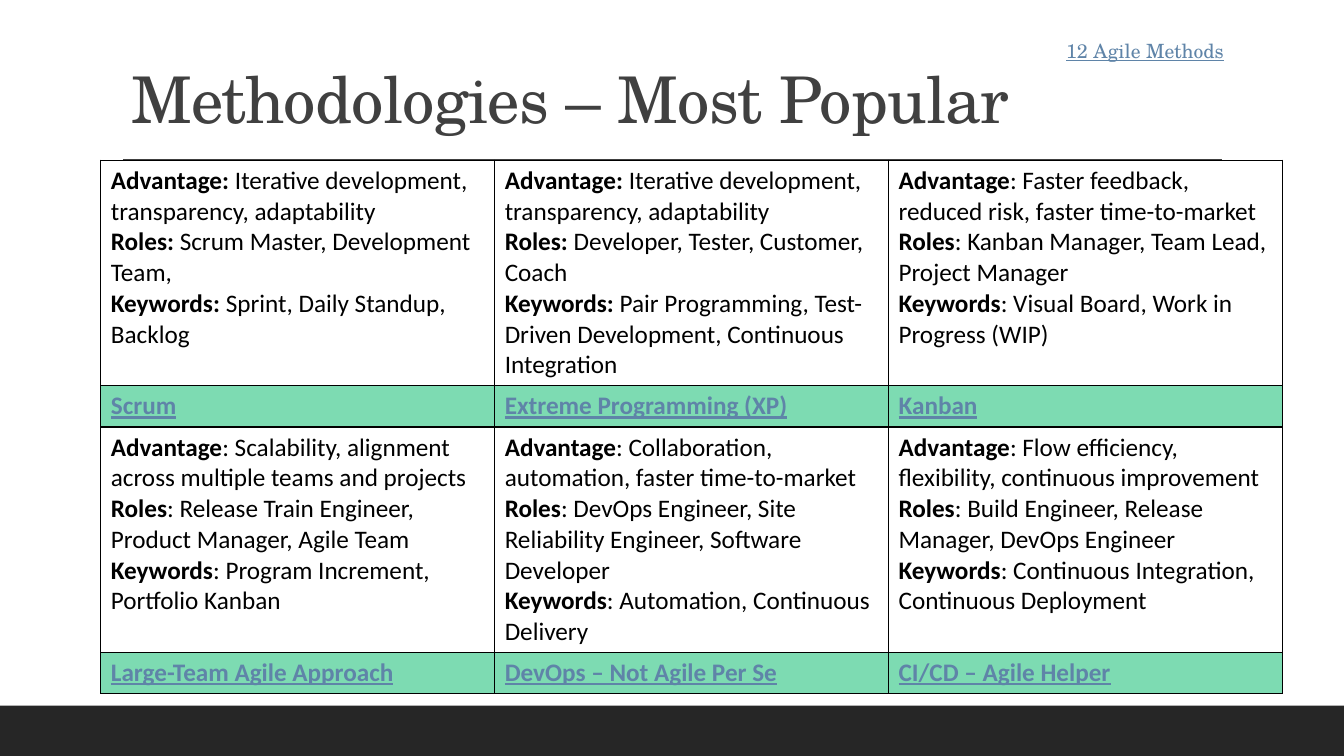
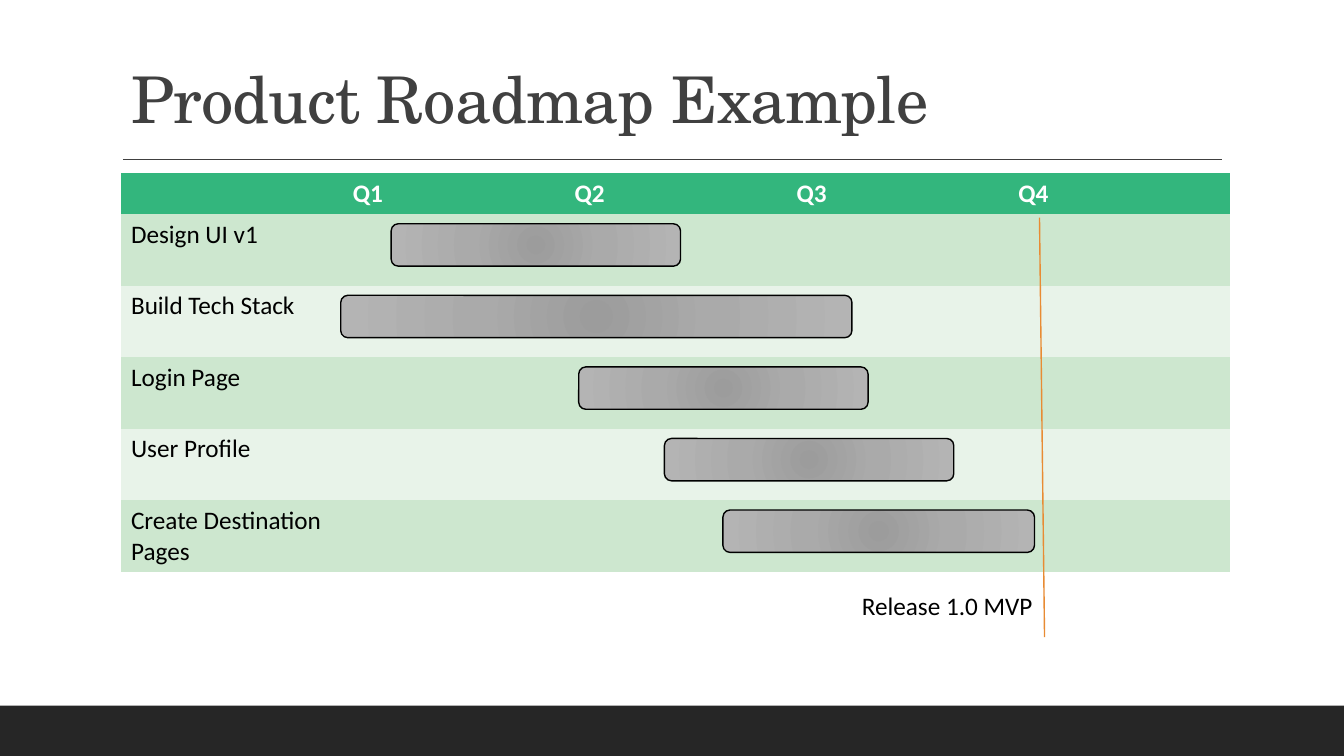
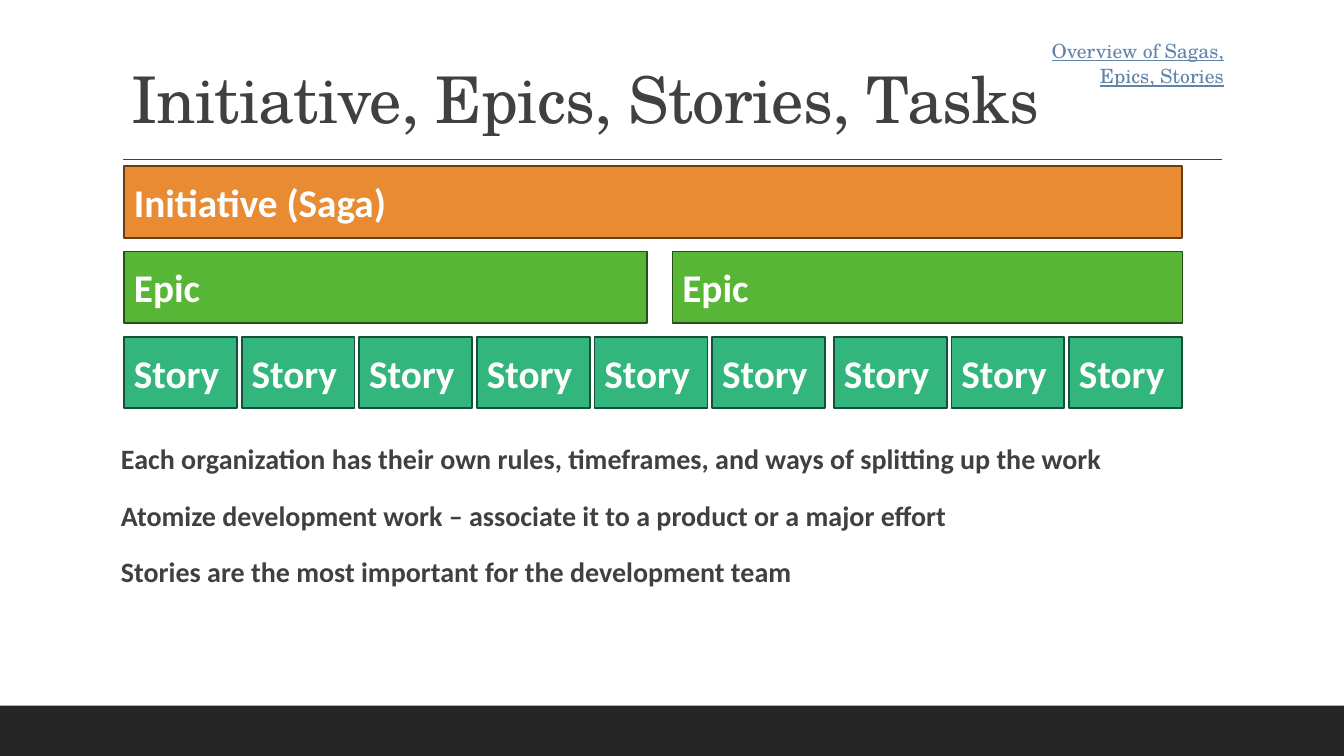
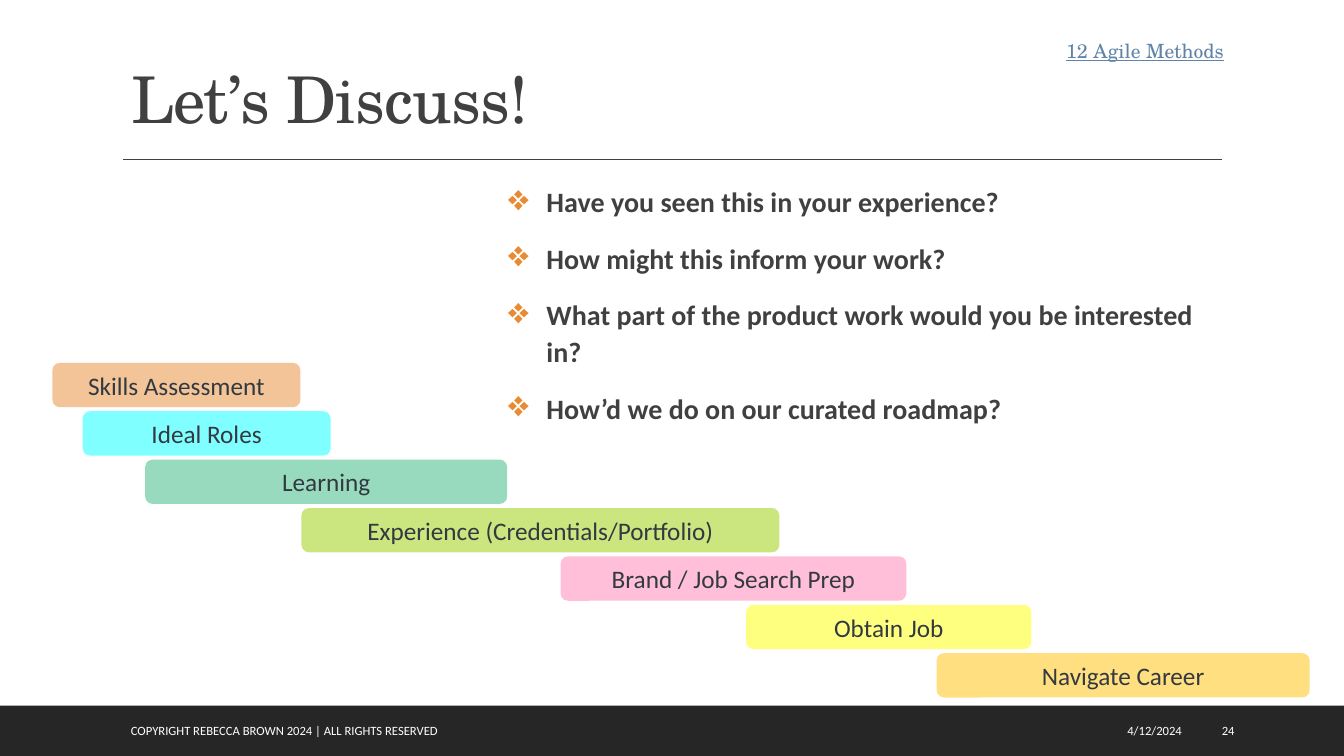
from lxml import etree
from pptx import Presentation
from pptx import util as u
from pptx.dml.color import RGBColor
from pptx.enum import shapes, text
from pptx.oxml import parse_xml
from pptx.oxml.ns import nsdecls, qn

BLACK = RGBColor(0x00, 0x00, 0x00)
WHITE = RGBColor(0xFF, 0xFF, 0xFF)
CHARCOAL = RGBColor(0x26, 0x26, 0x26)
GREY = RGBColor(0x40, 0x40, 0x40)
SLATE = RGBColor(0x33, 0x39, 0x40)
LINK = RGBColor(0x5F, 0x84, 0xA8)
ORANGE = RGBColor(0xE8, 0x8B, 0x33)
BROWN = RGBColor(0x66, 0x3D, 0x16)
GREEN = RGBColor(0x57, 0xB6, 0x36)
DARK_GREEN = RGBColor(0x26, 0x50, 0x18)
JADE = RGBColor(0x33, 0xB6, 0x7D)
DARK_JADE = RGBColor(0x16, 0x50, 0x37)
MINT = RGBColor(0x7D, 0xDB, 0xB2)
BAND_ODD = RGBColor(0xCD, 0xE7, 0xCF)
BAND_EVEN = RGBColor(0xE8, 0xF3, 0xE9)
CYAN = RGBColor(0x00, 0xFF, 0xFF)
LIME = RGBColor(0x99, 0xCC, 0x00)
PINK = RGBColor(0xFF, 0x81, 0xB4)
YELLOW = RGBColor(0xFF, 0xFF, 0x00)
AMBER = RGBColor(0xFF, 0xC0, 0x00)

SANS, SERIF = "Calibri", "TeX Gyre Schola"
PLAIN_TABLE = "{2D5ABB26-0587-4C30-8999-92F81FD0307C}"
LEFT, RIGHT, CENTER = text.PP_ALIGN.LEFT, text.PP_ALIGN.RIGHT, text.PP_ALIGN.CENTER
MIDDLE = text.MSO_ANCHOR.MIDDLE

TITLE_FONT = dict(name=SERIF, size=u.Pt(46))
LINK_FONT = dict(name=SERIF, size=u.Pt(14), underline=True)
BODY_FONT = dict(name=SANS, size=u.Pt(20), bold=True)
TABLE_FONT = dict(name=SANS, size=u.Pt(18))
BLOCK_FONT = dict(name=SANS, size=u.Pt(28), bold=True)
FOOTER_FONT = dict(name=SANS, size=u.Pt(9))
BODY_SPACING = dict(line_spacing=1.1, space_before=u.Pt(12), space_after=u.Pt(2))
FLUSH = dict(word_wrap=True, margin_left=0, margin_right=0)


def box(*lengths):
    return [u.Inches(length) for length in lengths]


def write(frame, lines, colour, font, spacing={}, layout={}):
    for key, value in layout.items():
        setattr(frame, key, value)
    for i, line in enumerate(lines):
        para = frame.paragraphs[0] if i == 0 else frame.add_paragraph()
        for key, value in spacing.items():
            setattr(para, key, value)
        pieces = [(line, {})] if isinstance(line, str) else zip(line, ({"bold": True}, {"bold": False}))
        for words, weight in pieces:
            run = para.add_run()
            run.text = words
            run.font.color.rgb = colour
            for key, value in {**font, **weight}.items():
                setattr(run.font, key, value)


prs = Presentation()
prs.slide_width, prs.slide_height = box(13.33, 7.5)
master_layout = prs.slide_layouts[5]

titles = [
    "Methodologies – Most Popular",
    "Product Roadmap Example",
    "Initiative, Epics, Stories, Tasks",
    "Let’s Discuss!",
]
slides = []
for heading in titles:
    slide = prs.slides.add_slide(master_layout)
    title = slide.shapes.title
    title.left, title.top, title.width, title.height = box(1.2, 0.31, 11, 1.1)
    write(title.text_frame, [heading], GREY, TITLE_FONT, dict(alignment=LEFT, line_spacing=0.9),
          dict(vertical_anchor=text.MSO_ANCHOR.BOTTOM, word_wrap=True, auto_size=text.MSO_AUTO_SIZE.NONE))
    title.text_frame.paragraphs[0].runs[0].font._element.set("spc", "-50")
    slides.append(slide)
methods, roadmap, hierarchy, discussion = slides

grid = methods.shapes.add_table(4, 3, *box(1, 1.59, 11.72, 5.28)).table
schedule = roadmap.shapes.add_table(6, 5, *box(1.2, 1.72, 11, 3.95)).table
for table, heights in ((grid, [2.23, 0.41] * 2), (schedule, [0.4] + [0.71] * 5)):
    table.first_row = table.horz_banding = False
    table._tbl.tblPr.find(qn("a:tableStyleId")).text = PLAIN_TABLE
    for row, height in zip(table.rows, heights):
        row.height = u.Inches(height)

band = methods.shapes.add_shape(shapes.MSO_SHAPE.RECTANGLE, *box(0, 7, 13.33, 0.5))
band.shadow.inherit = False
band.fill.solid()
band.fill.fore_color.rgb = CHARCOAL
band.line.fill.background()
rule = methods.shapes.add_connector(shapes.MSO_CONNECTOR.STRAIGHT, *box(1.22, 1.58, 12.12, 1.58))
release = roadmap.shapes.add_connector(shapes.MSO_CONNECTOR.STRAIGHT, *box(10.31, 2.16, 10.36, 6.32))
for stroke, colour in ((rule, GREY), (release, ORANGE)):
    stroke.line.color.rgb = colour
    stroke.line.width = u.Pt(1)
    etree.SubElement(stroke._element.spPr, qn("a:effectLst"))
for position, shared in enumerate((band, rule), 2):
    master_layout.shapes.element.insert(position, shared._element)

corner_links = [
    (methods, "12 Agile Methods"),
    (hierarchy, "Overview of Sagas, Epics, Stories"),
    (discussion, "12 Agile Methods"),
]
for slide, words in corner_links:
    corner = slide.shapes.add_textbox(*box(10.04, 0.31, 2.1, 1.57))
    write(corner.text_frame, [words], LINK, LINK_FONT, dict(alignment=RIGHT, **BODY_SPACING), FLUSH)

fields = ["Advantage", "Roles", "Keywords"]
methodologies = [
    ("Scrum", True, "Iterative development, transparency, adaptability",
     "Scrum Master, Development Team,", "Sprint, Daily Standup, Backlog"),
    ("Extreme Programming (XP)", True, "Iterative development, transparency, adaptability",
     "Developer, Tester, Customer, Coach", "Pair Programming, Test-Driven Development, Continuous Integration"),
    ("Kanban", False, "Faster feedback, reduced risk, faster time-to-market",
     "Kanban Manager, Team Lead, Project Manager", "Visual Board, Work in Progress (WIP)"),
    ("Large-Team Agile Approach", False, "Scalability, alignment across multiple teams and projects",
     "Release Train Engineer, Product Manager, Agile Team", "Program Increment, Portfolio Kanban"),
    ("DevOps – Not Agile Per Se", False, "Collaboration, automation, faster time-to-market",
     "DevOps Engineer, Site Reliability Engineer, Software Developer", "Automation, Continuous Delivery"),
    ("CI/CD – Agile Helper", False, "Flow efficiency, flexibility, continuous improvement",
     "Build Engineer, Release Manager, DevOps Engineer", "Continuous Integration, Continuous Deployment"),
]
for i, (method, bold_colon, *details) in enumerate(methodologies):
    row, column = i // 3 * 2, i % 3
    lines = [(field + ": ", detail) if bold_colon else (field, ": " + detail)
             for field, detail in zip(fields, details)]
    summary, label = grid.cell(row, column), grid.cell(row + 1, column)
    summary.fill.background()
    write(summary.text_frame, lines, BLACK, TABLE_FONT)
    label.fill.solid()
    label.fill.fore_color.rgb = MINT
    write(label.text_frame, [method], LINK, dict(bold=True, underline=True, **TABLE_FONT))
    for cell in (summary, label):
        for position, side in enumerate("LRTB"):
            cell._tc.get_or_add_tcPr().insert(position, parse_xml(
                f'<a:ln{side} {nsdecls("a")} w="12700"><a:solidFill>'
                f'<a:srgbClr val="{BLACK}"/></a:solidFill></a:ln{side}>'))

schedule_rows = [
    ["", "Q1", "Q2", "Q3", "Q4"],
    ["Design UI v1"],
    ["Build Tech Stack"],
    ["Login Page"],
    ["User Profile"],
    ["Create Destination Pages"],
]
for r, labels in enumerate(schedule_rows):
    for c in range(5):
        cell = schedule.cell(r, c)
        cell.fill.solid()
        cell.fill.fore_color.rgb = JADE if r == 0 else BAND_ODD if r % 2 else BAND_EVEN
        if c < len(labels) and labels[c]:
            write(cell.text_frame, [labels[c]], BLACK if r else WHITE, dict(bold=r == 0, **TABLE_FONT))

task_spans = [(3.88, 2.87), (3.38, 5.07), (5.74, 2.87), (6.59, 2.87), (7.17, 3.09)]
for i, (left, width) in enumerate(task_spans):
    task = roadmap.shapes.add_shape(shapes.MSO_SHAPE.ROUNDED_RECTANGLE, *box(left, 2.22 + 0.71 * i, width, 0.42))
    task.shadow.inherit = False
    task.line.color.rgb = BLACK
    task.line.width = u.Pt(1)
    task.fill.background()
    properties = task._element.spPr
    properties.replace(properties.find(qn("a:noFill")), parse_xml(
        f'<a:gradFill {nsdecls("a")} rotWithShape="1"><a:gsLst>'
        '<a:gs pos="0"><a:srgbClr val="9C9C9C"/></a:gs>'
        '<a:gs pos="45000"><a:srgbClr val="AAAAAA"/></a:gs>'
        '<a:gs pos="100000"><a:srgbClr val="B4B4B4"/></a:gs></a:gsLst>'
        '<a:path path="circle"><a:fillToRect l="100000" t="100000" r="100000" b="100000"/></a:path>'
        '</a:gradFill>'))
milestone = roadmap.shapes.add_textbox(*box(8.45, 5.81, 2.03, 0.4))
write(milestone.text_frame, ["Release 1.0 MVP"], BLACK, TABLE_FONT, layout=dict(word_wrap=True))

levels = [
    ("Initiative (Saga)", ORANGE, BROWN, [(1.23, 10.49)]),
    ("Epic", GREEN, DARK_GREEN, [(1.23, 5.19), (6.67, 5.06)]),
    ("Story", JADE, DARK_JADE, [(1.23 + 3.5 * i / 3 + 0.04 * (i > 5), 1.12) for i in range(9)]),
]
for level, (name, fill, edge, spans) in enumerate(levels):
    for left, width in spans:
        block = hierarchy.shapes.add_shape(shapes.MSO_SHAPE.RECTANGLE, *box(left, 1.65 + 0.845 * level, width, 0.71))
        block.shadow.inherit = False
        block.fill.solid()
        block.fill.fore_color.rgb = fill
        block.line.color.rgb = edge
        block.line.width = u.Pt(1.25)
        write(block.text_frame, [name], WHITE, BLOCK_FONT, dict(alignment=LEFT), dict(vertical_anchor=MIDDLE))

remarks = hierarchy.shapes.add_textbox(*box(1.2, 4.3, 11, 2.12))
write(remarks.text_frame, [
    "Each organization has their own rules, timeframes, and ways of splitting up the work",
    "Atomize development work – associate it to a product or a major effort",
    "Stories are the most important for the development team",
], GREY, BODY_FONT, BODY_SPACING, FLUSH)

questions = discussion.shapes.add_textbox(*box(5.04, 1.75, 7.16, 4.67))
write(questions.text_frame, [
    "Have you seen this in your experience?",
    "How might this inform your work?",
    "What part of the product work would you be interested in?",
    "How’d we do on our curated roadmap?",
], GREY, BODY_FONT, BODY_SPACING, FLUSH)
for question in questions.text_frame.paragraphs:
    bullet = question._p.get_or_add_pPr()
    bullet.set("marL", str(u.Inches(0.38)))
    bullet.set("indent", str(-u.Inches(0.38)))
    bullet_colour = etree.SubElement(bullet, qn("a:buClr"))
    etree.SubElement(bullet_colour, qn("a:srgbClr"), val=str(ORANGE))
    etree.SubElement(bullet, qn("a:buSzPct"), val="130000")
    etree.SubElement(bullet, qn("a:buChar"), char="❖")

footers = [
    ("4/12/2024", 8.99, 2.83, RIGHT),
    ("COPYRIGHT REBECCA BROWN 2024 | ALL RIGHTS RESERVED", 1.2, 7.46, LEFT),
    ("24", 12.02, 0.85, LEFT),
]
for words, left, width, side in footers:
    footer = discussion.shapes.add_textbox(*box(left, 7.05, width, 0.4))
    write(footer.text_frame, [words], WHITE, FOOTER_FONT, dict(alignment=side),
          dict(word_wrap=True, vertical_anchor=MIDDLE))

career_steps = [
    ("Skills Assessment", ORANGE, 0.52, 2.46),
    ("Ideal Roles", CYAN, 0.82, 2.46),
    ("Learning", JADE, 1.44, 3.59),
    ("Experience (Credentials/Portfolio)", LIME, 2.99, 4.74),
    ("Brand / Job Search Prep", PINK, 5.56, 3.43),
    ("Obtain Job", YELLOW, 7.4, 2.83),
    ("Navigate Career", AMBER, 9.29, 3.7),
]
staircase = discussion.shapes.add_group_shape()
for i, (name, colour, left, width) in enumerate(career_steps):
    step = staircase.shapes.add_shape(shapes.MSO_SHAPE.ROUNDED_RECTANGLE, *box(left, 3.6 + 0.48 * i, width, 0.44))
    step.shadow.inherit = False
    step.line.fill.background()
    step.fill.solid()
    step.fill.fore_color.rgb = colour
    tint = step._element.spPr.find(qn("a:solidFill")).find(qn("a:srgbClr"))
    etree.SubElement(tint, qn("a:alpha"), val="50000")
    write(step.text_frame, [name], SLATE, TABLE_FONT, dict(alignment=CENTER), dict(vertical_anchor=MIDDLE))

prs.save("out.pptx")
